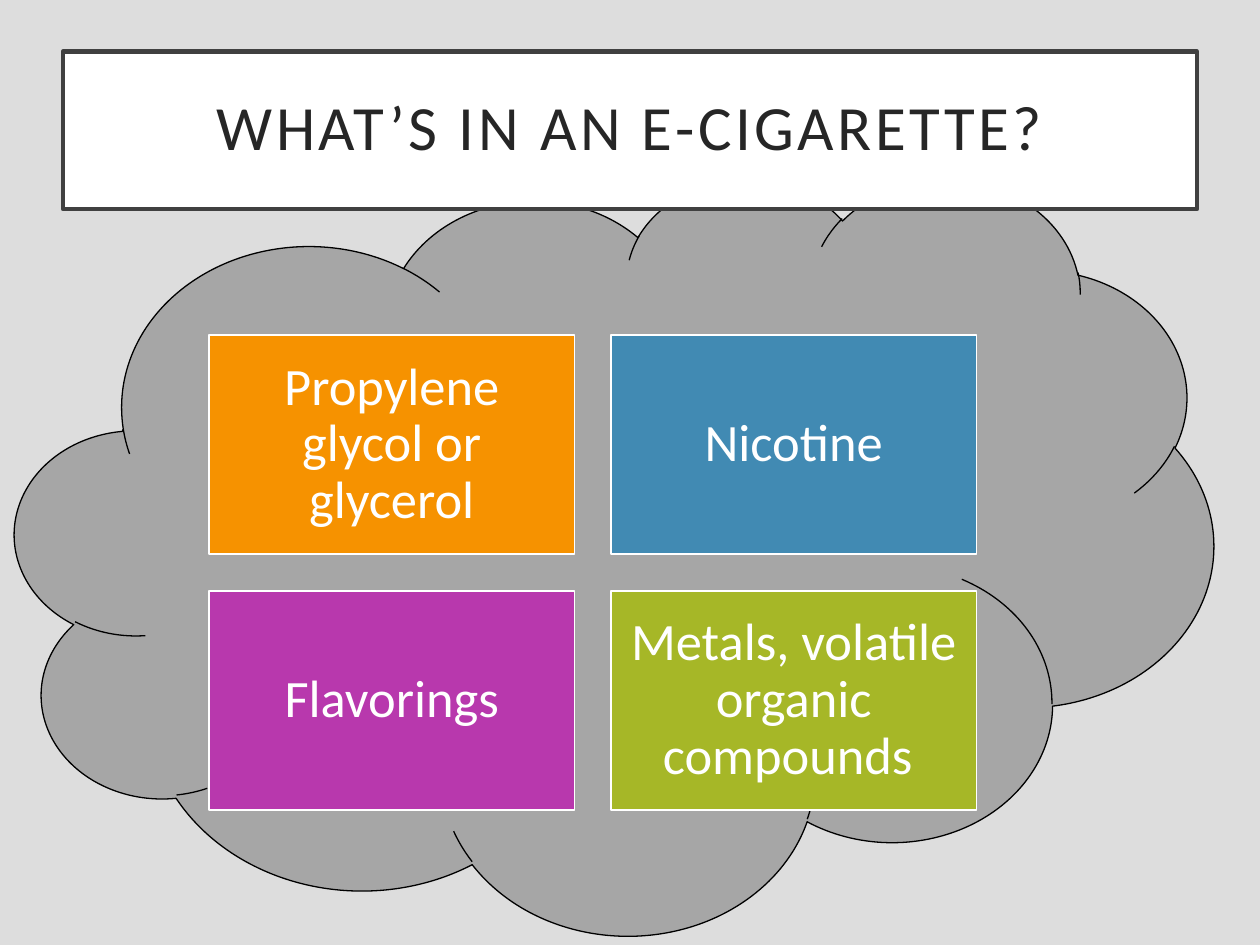
import pptx
import pptx.util
import pptx.dml.color
import pptx.enum.shapes
import pptx.enum.text
from dataclasses import dataclass

Inches = pptx.util.Inches
Pt = pptx.util.Pt
SHAPE = pptx.enum.shapes.MSO_SHAPE


@dataclass(frozen=True)
class Theme:
    font: str = "Calibri"
    title_size: int = 36
    card_size: int = 30
    background: str = "DDDDDD"
    white: str = "FFFFFF"
    title_text: str = "262626"
    title_line: str = "404040"
    cloud: str = "A6A6A6"
    cloud_line: str = "000000"
    orange: str = "F69200"
    blue: str = "418AB3"
    purple: str = "B838AD"
    green: str = "A6B727"


def rgb(value):
    return pptx.dml.color.RGBColor.from_string(value)


class SlideBuilder:
    """Holds the theme and the current slide."""

    def __init__(self, prs, theme):
        self.theme = theme
        self.s = prs.slides.add_slide(prs.slide_layouts[5])
        fill = self.s.background.fill
        fill.solid()
        fill.fore_color.rgb = rgb(theme.background)

    def paint(self, sp, fill, line, width):
        sp.fill.solid()
        sp.fill.fore_color.rgb = rgb(fill)
        sp.line.color.rgb = rgb(line)
        sp.line.width = Pt(width)

    def label(self, sp, text, size, color, inset):
        tf = sp.text_frame
        tf.text = text
        tf.word_wrap = True
        tf.auto_size = pptx.enum.text.MSO_AUTO_SIZE.NONE
        tf.vertical_anchor = pptx.enum.text.MSO_ANCHOR.MIDDLE
        tf.margin_left = tf.margin_right = Inches(inset)
        tf.margin_top = tf.margin_bottom = Inches(inset)
        p = tf.paragraphs[0]
        p.alignment = pptx.enum.text.PP_ALIGN.CENTER
        p.line_spacing = 0.9
        r = p.runs[0]
        r.font.name = self.theme.font
        r.font.size = Pt(size)
        r.font.color.rgb = rgb(color)
        return r

    def shape(self, kind, left, top, width, height):
        sp = self.s.shapes.add_shape(
            kind, Inches(left), Inches(top), Inches(width), Inches(height))
        sp.shadow.inherit = False
        return sp

    def title(self, text, left, top, width, height):
        t = self.theme
        sp = self.s.shapes.title
        sp.left, sp.top = Inches(left), Inches(top)
        sp.width, sp.height = Inches(width), Inches(height)
        self.paint(sp, t.white, t.title_line, 2.5)
        r = self.label(sp, text, t.title_size, t.title_text, 0.2)
        # Letter spacing of 2 pt
        r._r.get_or_add_rPr().set("spc", "200")

    def cloud(self, left, top, width, height):
        sp = self.shape(SHAPE.CLOUD, left, top, width, height)
        self.paint(sp, self.theme.cloud, self.theme.cloud_line, 0.75)
        # The title box covers the top of the cloud
        self.s.shapes.title.element.addprevious(sp.element)

    def card(self, text, fill, left, top, width, height):
        t = self.theme
        sp = self.shape(SHAPE.RECTANGLE, left, top, width, height)
        self.paint(sp, fill, t.white, 1)
        self.label(sp, text, t.card_size, t.white, 0.12)


def main():
    prs = pptx.Presentation()
    prs.slide_width, prs.slide_height = Inches(10), Inches(7.5)
    theme = Theme()
    slide = SlideBuilder(prs, theme)

    # Title and cloud
    slide.title("WHAT’S IN AN E-CIGARETTE?", 0.5, 0.41, 9, 1.25)
    slide.cloud(0.12, 1.41, 9.51, 6)

    # Ingredients in a two-by-two grid
    ingredients = [
        ("Propylene glycol or glycerol", theme.orange),
        ("Nicotine", theme.blue),
        ("Flavorings", theme.purple),
        ("Metals, volatile organic compounds ", theme.green),
    ]
    left, top, width, height, gap = 1.66, 2.66, 2.9, 1.74, 0.29
    for i, (text, fill) in enumerate(ingredients):
        row, col = divmod(i, 2)
        slide.card(text, fill, left + col * (width + gap),
                   top + row * (height + gap), width, height)

    prs.save("out.pptx")


if __name__ == "__main__":
    main()
